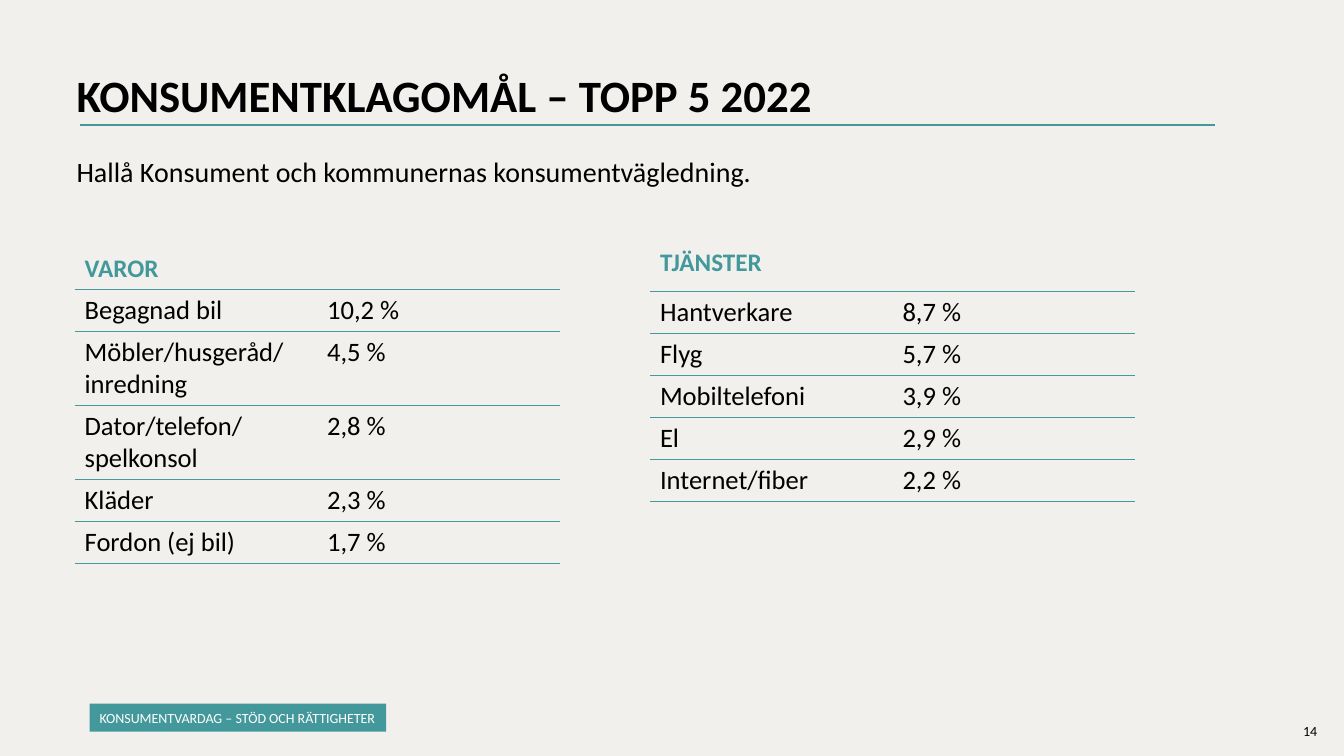
from dataclasses import dataclass

from lxml import etree
from pptx import Presentation
from pptx.dml.color import RGBColor
from pptx.enum import shapes, text
from pptx.oxml import ns
from pptx.util import Cm, Pt


@dataclass(frozen=True)
class Theme:
    font: str = "Calibri"
    background: str = "F1F0EC"
    accent: str = "43989B"
    border: str = "44999C"
    ink: str = "000000"
    white: str = "FFFFFF"
    title_size: int = 32
    intro_size: int = 20
    row_size: int = 19
    header_size: int = 18
    small_size: int = 10


@dataclass(frozen=True)
class ComplaintTable:
    heading: str
    left: float
    top: float
    header_height: float
    rows: tuple[tuple[str, str], ...]


THEME = Theme()
COLUMN_WIDTH = 6.11
ROW_HEIGHT = 1.06
TABLES = (
    ComplaintTable("VAROR", 1.88, 6.25, 1.04, (
        ("Begagnad bil", "10,2 %"),
        ("Möbler/husgeråd/\vinredning", "4,5 %"),
        ("Dator/telefon/\vspelkonsol", "2,8 %"),
        ("Kläder", "2,3 %"),
        ("Fordon (ej bil)", "1,7 %"),
    )),
    ComplaintTable("TJÄNSTER", 16.38, 6.12, 1.22, (
        ("Hantverkare", "8,7 %"),
        ("Flyg", "5,7 %"),
        ("Mobiltelefoni", "3,9 %"),
        ("El", "2,9 %"),
        ("Internet/fiber", "2,2 %"),
    )),
)


def write(frame, words: str, size: int, color: str, bold: bool = False) -> None:
    frame.text = words
    paragraph = frame.paragraphs[0]
    paragraph.alignment = text.PP_ALIGN.LEFT
    font = paragraph.font
    font.name, font.size, font.bold = THEME.font, Pt(size), bold
    font.color.rgb = RGBColor.from_string(color)


def place(shape, left: float, top: float, width: float, height: float) -> None:
    shape.left, shape.top = Cm(left), Cm(top)
    shape.width, shape.height = Cm(width), Cm(height)


def add_title(page, words: str) -> None:
    title = page.shapes.title
    place(title, 1.68, 1.73, 29.21, 2.03)
    frame = title.text_frame
    write(frame, words, THEME.title_size, THEME.ink, bold=True)
    frame.auto_size = text.MSO_AUTO_SIZE.NONE
    frame.vertical_anchor = text.MSO_ANCHOR.TOP
    frame.paragraphs[0].line_spacing = 0.9


def add_title_rule(page) -> None:
    rule = page.shapes.add_connector(
        shapes.MSO_CONNECTOR.STRAIGHT, Cm(2.01), Cm(3.15), Cm(30.61), Cm(3.15))
    rule.line.color.rgb = RGBColor.from_string(THEME.accent)
    rule.line.width = Pt(1.5)
    etree.SubElement(rule._element.spPr, ns.qn("a:effectLst"))


def add_text(page, words: str, size: int, left: float, top: float,
             width: float, height: float) -> None:
    box = page.shapes.add_textbox(Cm(left), Cm(top), Cm(width), Cm(height))
    box.text_frame.word_wrap = True
    write(box.text_frame, words, size, THEME.ink)


def add_section_tag(page, words: str) -> None:
    tag = page.shapes.add_shape(
        shapes.MSO_SHAPE.RECTANGLE, Cm(2.26), Cm(17.73), Cm(7.47), Cm(0.71))
    tag.shadow.inherit = False
    tag.fill.solid()
    tag.fill.fore_color.rgb = RGBColor.from_string(THEME.accent)
    tag.line.fill.background()
    frame = tag.text_frame
    frame.word_wrap = False
    frame.vertical_anchor = text.MSO_ANCHOR.MIDDLE
    frame.margin_left, frame.margin_top = Cm(0.25), Cm(0.2)
    frame.margin_right, frame.margin_bottom = Cm(0.1), Cm(0.13)
    write(frame, words, THEME.small_size, THEME.white)
    frame.paragraphs[0].line_spacing = 0.9


def set_borders(cell, top: float, bottom: float) -> None:
    """Give the cell horizontal borders in points; zero means none."""
    properties = cell._tc.get_or_add_tcPr()
    widths = {"a:lnL": 0, "a:lnR": 0, "a:lnT": top, "a:lnB": bottom}
    for position, (tag, width) in enumerate(widths.items()):
        border = etree.Element(ns.qn(tag), w=str(Pt(width)))
        if width:
            fill = etree.SubElement(border, ns.qn("a:solidFill"))
            etree.SubElement(fill, ns.qn("a:srgbClr"), val=THEME.border)
        else:
            etree.SubElement(border, ns.qn("a:noFill"))
        properties.insert(position, border)


def add_complaints(page, complaints: ComplaintTable) -> None:
    rows = ((complaints.heading, ""), *complaints.rows)
    height = complaints.header_height + ROW_HEIGHT * len(complaints.rows)
    table = page.shapes.add_table(
        len(rows), 2, Cm(complaints.left), Cm(complaints.top),
        Cm(2 * COLUMN_WIDTH), Cm(height)).table
    table.first_row = table.horz_banding = False
    for column in table.columns:
        column.width = Cm(COLUMN_WIDTH)
    for index, values in enumerate(rows):
        header = index == 0
        table.rows[index].height = Cm(complaints.header_height if header else ROW_HEIGHT)
        for cell, value in zip(table.rows[index].cells, values):
            cell.fill.background()
            if header:
                write(cell.text_frame, value, THEME.header_size, THEME.accent, bold=True)
                set_borders(cell, top=0, bottom=1)
            else:
                write(cell.text_frame, value, THEME.row_size, THEME.ink)
                set_borders(cell, top=1 if index == 1 else 0.5, bottom=0.5)


def main() -> None:
    deck = Presentation()
    deck.slide_width, deck.slide_height = Cm(33.87), Cm(19.05)
    page = deck.slides.add_slide(deck.slide_layouts.get_by_name("Title Only"))
    page.background.fill.solid()
    page.background.fill.fore_color.rgb = RGBColor.from_string(THEME.background)

    add_title(page, "KONSUMENTKLAGOMÅL – TOPP 5 2022")
    add_title_rule(page)
    add_text(page, "Hallå Konsument och kommunernas konsumentvägledning.",
             THEME.intro_size, 1.68, 3.76, 21.16, 1.12)
    for complaints in TABLES:
        add_complaints(page, complaints)
    add_section_tag(page, "KONSUMENTVARDAG – STÖD OCH RÄTTIGHETER")
    add_text(page, "14", THEME.small_size, 32.59, 18.08, 1.02, 0.69)
    deck.save("out.pptx")


if __name__ == "__main__":
    main()
